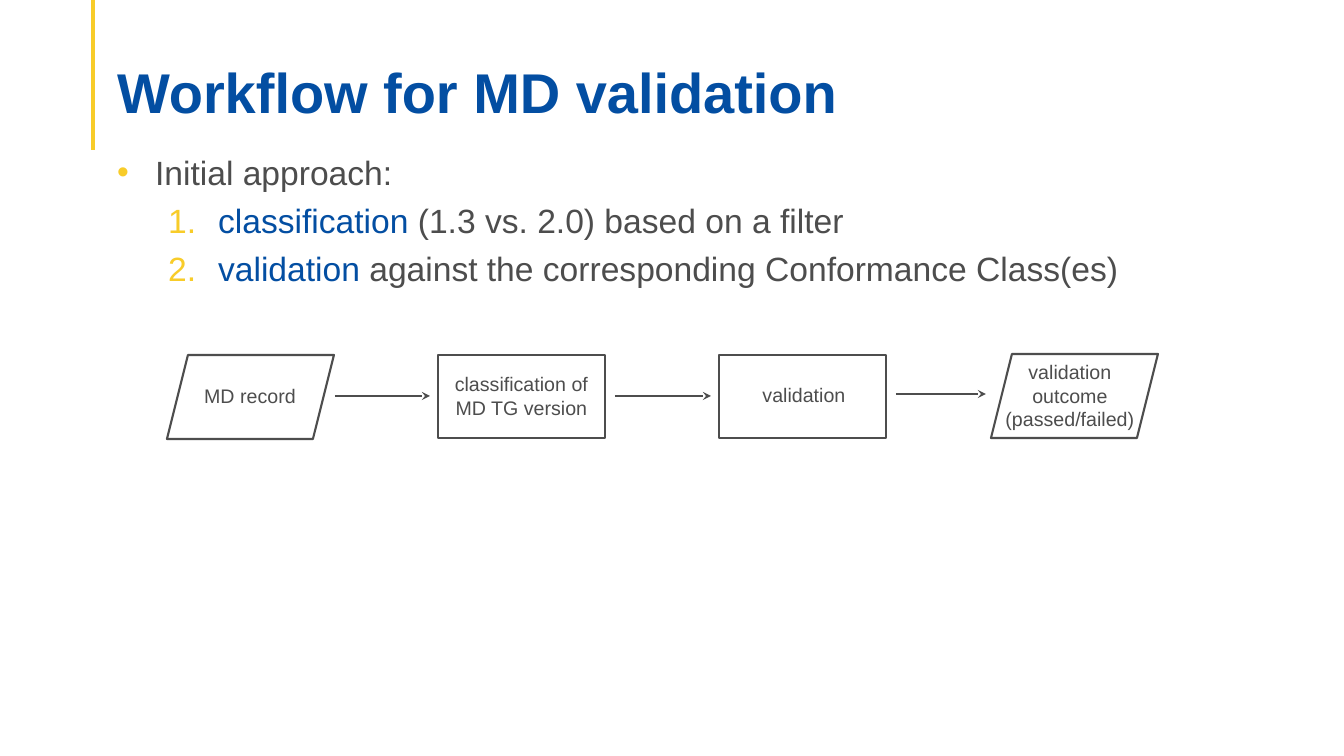
from lxml import etree
from pptx import Presentation
from pptx.dml.color import RGBColor
from pptx.enum.shapes import MSO_CONNECTOR, MSO_SHAPE
from pptx.enum.text import MSO_ANCHOR, MSO_AUTO_SIZE, PP_ALIGN
from pptx.oxml.ns import qn
from pptx.util import Pt

STRAIGHT = MSO_CONNECTOR.STRAIGHT
DATA, PROCESS = MSO_SHAPE.PARALLELOGRAM, MSO_SHAPE.RECTANGLE
TOP, BOTTOM = MSO_ANCHOR.TOP, MSO_ANCHOR.BOTTOM
LEFT, CENTER = PP_ALIGN.LEFT, PP_ALIGN.CENTER
NO_FIT = MSO_AUTO_SIZE.NONE
FIT_SHAPE = MSO_AUTO_SIZE.SHAPE_TO_FIT_TEXT
PX = 914400 / 100.8
COLORS = {"blue": "034EA2", "gray": "4D4D4D", "yellow": "F8CC29"}


def px(*lengths):
    return [round(length * PX) for length in lengths]


def add_line(start_x, start_y, end_x, end_y, color, width):
    line = slide.shapes.add_connector(STRAIGHT, *px(start_x, start_y, end_x, end_y))
    line.line.color.rgb = RGBColor.from_string(COLORS[color])
    line.line.width = Pt(width)
    etree.SubElement(line._element.spPr, qn("a:effectLst"))
    return line


presentation = Presentation()
presentation.slide_width, presentation.slide_height = px(1344, 756)
slide = presentation.slides.add_slide(presentation.slide_layouts[1])

add_line(93, 0, 93, 150, "yellow", 2.25)

title = slide.shapes.title
title.left, title.top, title.width, title.height = px(107, 39, 1131, 87)
title_frame = title.text_frame
title_frame.text = "Workflow for MD validation"
title_frame.auto_size = NO_FIT
title_frame.vertical_anchor = BOTTOM
title_frame.margin_bottom = 0
paragraph = title_frame.paragraphs[0]
paragraph.alignment = LEFT
paragraph.line_spacing = 0.9
paragraph.font.name = "Arial"
paragraph.font.size = Pt(40)
paragraph.font.bold = True
paragraph.font.color.rgb = RGBColor.from_string(COLORS["blue"])

body = slide.placeholders[1]
body.left, body.top, body.width, body.height = px(107, 147, 1173, 184)
body_frame = body.text_frame
body_frame.auto_size = NO_FIT
body_frame.vertical_anchor = TOP
approach = [
    (0, 38, 38, 0, [("Initial approach:", "gray")]),
    (1, 101, 50, 5.5, [("classification", "blue"), (" (1.3 vs. 2.0) based on a filter", "gray")]),
    (1, 101, 50, 5.5, [("validation", "blue"), (" against the corresponding Conformance Class(es)", "gray")]),
]
for index, (level, margin, hanging, space, runs) in enumerate(approach):
    paragraph = body_frame.add_paragraph() if index else body_frame.paragraphs[0]
    paragraph.level = level
    properties = paragraph._p.get_or_add_pPr()
    properties.set("marL", str(px(margin)[0]))
    properties.set("indent", str(px(-hanging)[0]))
    bullet_color = etree.SubElement(properties, qn("a:buClr"))
    etree.SubElement(bullet_color, qn("a:srgbClr"), val=COLORS["yellow"])
    etree.SubElement(properties, qn("a:buFont"), typeface="Arial")
    if level:
        etree.SubElement(properties, qn("a:buAutoNum"), type="arabicPeriod")
    else:
        etree.SubElement(properties, qn("a:buChar"), char="•")
    paragraph.space_before = Pt(space)
    paragraph.font.name = "Arial"
    paragraph.font.size = Pt(24)
    for text, color in runs:
        run = paragraph.add_run()
        run.text = text
        run.font.color.rgb = RGBColor.from_string(COLORS[color])

workflow = [
    (DATA, (167, 355, 167, 84), "MD record", (182, 379, 136, 34)),
    (PROCESS, (438, 355, 167, 83), "classification of MD TG version", (438, 367, 167, 57)),
    (PROCESS, (719, 355, 167, 83), "validation", (736, 378, 136, 34)),
    (DATA, (991, 354, 167, 84), "validation outcome (passed/failed)", (994, 355, 152, 82)),
]
for kind, outline_box, text, label_box in workflow:
    outline = slide.shapes.add_shape(kind, *px(*outline_box))
    outline.shadow.inherit = False
    outline.fill.background()
    outline.line.color.rgb = RGBColor.from_string(COLORS["gray"])
    outline.line.width = Pt(1.5)

    label = slide.shapes.add_textbox(*px(*label_box))
    label_frame = label.text_frame
    label_frame.word_wrap = True
    label_frame.auto_size = FIT_SHAPE
    label_frame.text = text
    paragraph = label_frame.paragraphs[0]
    paragraph.alignment = CENTER
    paragraph.font.name = "Arial"
    paragraph.font.size = Pt(14)
    paragraph.font.color.rgb = RGBColor.from_string(COLORS["gray"])

for start_x, end_x, y in [(335, 430, 396), (615, 711, 396), (896, 986, 394)]:
    arrow = add_line(start_x, y, end_x, y, "gray", 1.5)
    etree.SubElement(arrow.line._get_or_add_ln(), qn("a:tailEnd"), type="stealth")

presentation.save("out.pptx")
